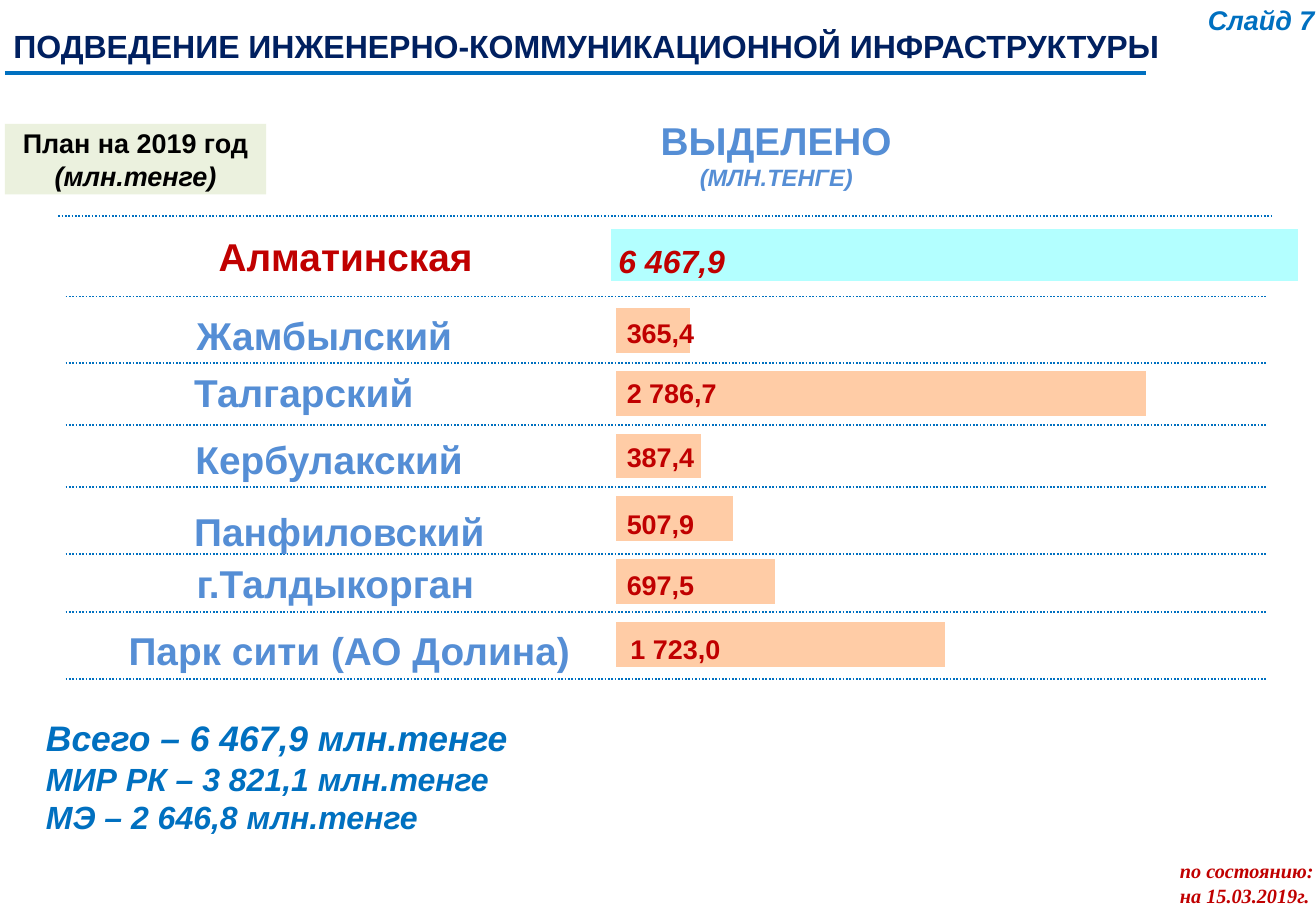
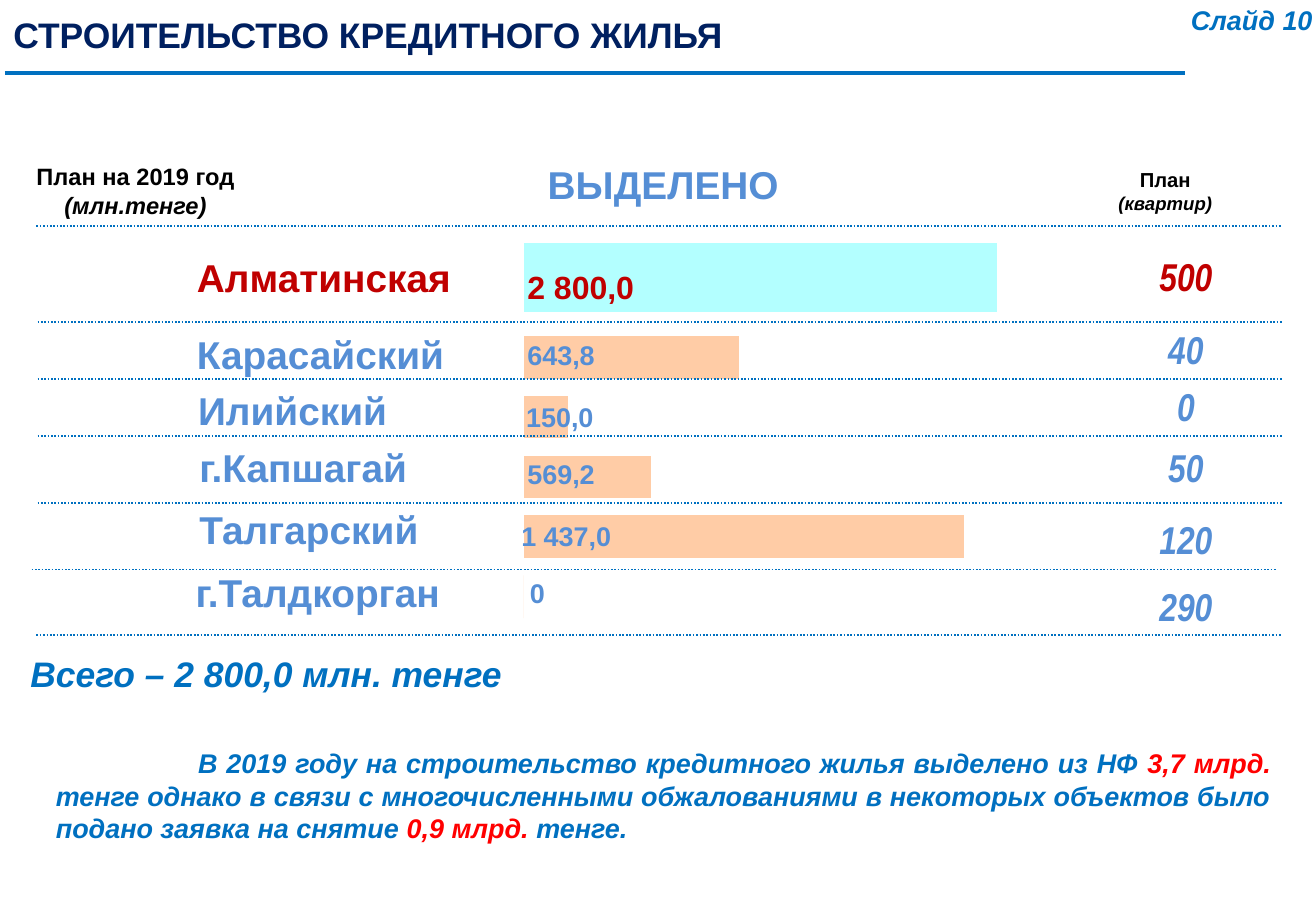
from dataclasses import dataclass, replace
from typing import Any, Optional

from lxml import etree
from pptx import Presentation
from pptx import util as u
from pptx.chart import data as chart_data
from pptx.dml.color import RGBColor
from pptx.enum import chart as charts, dml, shapes, text
from pptx.oxml.ns import qn

# Shared scale, colours and insets
SCALE = 9144  # EMU in one px, 100 px to the inch
NAVY = RGBColor(0x00, 0x20, 0x60)
BLUE = RGBColor(0x00, 0x70, 0xC0)
SOFT_BLUE = RGBColor(0x55, 0x8E, 0xD5)
DARK_RED = RGBColor(0xC0, 0x00, 0x00)
RED = RGBColor(0xFF, 0x00, 0x00)
BLACK = RGBColor(0x00, 0x00, 0x00)
PALE_GREEN = RGBColor(0xEB, 0xF1, 0xDE)
CYAN = RGBColor(0xB3, 0xFF, 0xFF)
PEACH = RGBColor(0xFF, 0xCC, 0xA6)
WIDE = (12, 6)
NARROW = (10, 5)
CENTER = text.PP_ALIGN.CENTER
JUSTIFY = text.PP_ALIGN.JUSTIFY


def px(length: int) -> u.Emu:
    return u.Emu(length * SCALE)


@dataclass(frozen=True)
class Style:
    size: int
    color: RGBColor
    italic: bool = False
    font: str = "Arial"


NAME = Style(23, SOFT_BLUE)
REGION = Style(23, DARK_RED)
FLATS = Style(23, SOFT_BLUE, True, "Arial Narrow")
TOTAL = Style(21, BLUE, True)
SUBTOTAL = Style(19, BLUE, True)
NOTE = Style(16, BLUE, True)
STAMP = Style(12, DARK_RED, True, "Times New Roman")


@dataclass(frozen=True)
class Line:
    """One paragraph: runs of text, each with an optional own colour."""
    runs: list[tuple[str, Optional[RGBColor]]]
    style: Style
    indent: int = 0


@dataclass(frozen=True)
class Label:
    left: int
    top: int
    width: int
    lines: list[Line]
    inset: tuple[int, int] = WIDE
    height: Optional[int] = None  # None: as tall as its lines
    align: Optional[text.PP_ALIGN] = None
    wrap: bool = False
    middle: bool = False
    fill: Optional[RGBColor] = None


@dataclass(frozen=True)
class Row:
    """A district: its name, its allocated sum, its bar and its flats."""
    name: str
    name_left: int
    name_top: int
    name_width: int
    value: str
    value_left: int
    value_top: int
    bar: int
    flats: str = ""
    flats_top: int = 0


@dataclass(frozen=True)
class BarChart:
    left: int
    top: int
    width: int
    height: int
    plot: tuple[float, float, float, float]
    maximum: int
    values: list[int]
    color: RGBColor


def line(words: str, style: Style) -> Line:
    return Line([(words, None)], style)


def add_label(slide: Any, label: Label) -> None:
    side, edge = label.inset
    height = label.height or round(sum(item.style.size * 1.7 for item in label.lines)) + 2 * edge
    box = slide.shapes.add_textbox(px(label.left), px(label.top), px(label.width), px(height))
    if label.fill is not None:
        box.fill.solid()
        box.fill.fore_color.rgb = label.fill
    frame = box.text_frame
    frame.word_wrap = label.wrap
    frame.auto_size = (text.MSO_AUTO_SIZE.NONE if label.height
                       else text.MSO_AUTO_SIZE.SHAPE_TO_FIT_TEXT)
    frame.margin_left = frame.margin_right = px(side)
    frame.margin_top = frame.margin_bottom = px(edge)
    frame.vertical_anchor = text.MSO_ANCHOR.MIDDLE if label.middle else text.MSO_ANCHOR.TOP
    for index, item in enumerate(label.lines):
        paragraph = frame.add_paragraph() if index else frame.paragraphs[0]
        if label.align is not None:
            paragraph.alignment = label.align
        if item.indent:
            paragraph._p.get_or_add_pPr().set("indent", str(px(item.indent)))
        font = paragraph.font
        font.name, font.size = item.style.font, u.Pt(item.style.size)
        font.bold, font.italic = True, item.style.italic
        font.color.rgb = item.style.color
        for words, color in item.runs:
            run = paragraph.add_run()
            run.text = words
            if color is not None:
                run.font.color.rgb = color


def add_rule(slide: Any, left: int, right: int, top: int, dotted: bool = True) -> None:
    rule = slide.shapes.add_connector(
        shapes.MSO_CONNECTOR.STRAIGHT, px(left), px(top), px(right), px(top))
    rule.line.color.rgb = BLUE
    rule.line.width = u.Pt(1 if dotted else 2.25)
    if dotted:
        rule.line.dash_style = dml.MSO_LINE.ROUND_DOT
    etree.SubElement(rule._element.spPr, qn("a:effectLst"))


def add_bars(slide: Any, bars: BarChart) -> None:
    data = chart_data.CategoryChartData()
    data.categories = [str(number + 1) for number in range(len(bars.values))]
    data.add_series("Series 1", bars.values)
    chart = slide.shapes.add_chart(
        charts.XL_CHART_TYPE.BAR_STACKED, px(bars.left), px(bars.top),
        px(bars.width), px(bars.height), data).chart
    chart.has_legend = chart.has_title = False
    chart.font.name, chart.font.size = "Calibri", u.Pt(18)
    chart.font.color.rgb = BLACK
    for axis in (chart.category_axis, chart.value_axis):
        axis.has_major_gridlines = False
        axis.visible = False
    chart.value_axis.minimum_scale = 0
    chart.value_axis.maximum_scale = bars.maximum
    plot = chart.plots[0]
    plot.gap_width, plot.overlap, plot.vary_by_categories = 40, 100, False
    fill = plot.series[0].format.fill
    fill.solid()
    fill.fore_color.rgb = bars.color

    # Fixed inner plot area
    area = chart._chartSpace.chart.plotArea
    for old in area.findall(qn("c:layout")):
        area.remove(old)
    layout = etree.Element(qn("c:layout"))
    area.insert(0, layout)
    manual = etree.SubElement(layout, qn("c:manualLayout"))
    settings = [("layoutTarget", "inner"), ("xMode", "edge"), ("yMode", "edge")]
    settings += list(zip("xywh", map(str, bars.plot)))
    for tag, value in settings:
        etree.SubElement(manual, qn(f"c:{tag}")).set("val", value)


def add_rows(slide: Any, rows: list[Row], inset: tuple[int, int], value_color: RGBColor) -> None:
    value_widths = {1: 12, 5: 56, 7: 75}
    for row in rows:
        add_label(slide, Label(row.name_left, row.name_top, row.name_width,
                               [line(row.name, NAME)], inset))
        add_label(slide, Label(row.value_left, row.value_top,
                               value_widths[len(row.value)] + 2 * inset[0],
                               [line(row.value, Style(16, value_color))], inset))
        if row.flats:
            add_flats(slide, row.flats, row.flats_top, FLATS)


def add_flats(slide: Any, count: str, top: int, style: Style) -> None:
    add_label(slide, Label(926, top, 100, [line(count, style)], align=CENTER, middle=True))


def new_slide(presentation: Any, title: Label, rule_right: int, number: Label) -> Any:
    slide = presentation.slides.add_slide(presentation.slide_layouts[6])
    add_label(slide, title)
    add_rule(slide, 4, rule_right, 60, dotted=False)
    add_label(slide, number)
    return slide


def plan_label(left: int, top: int, width: int, heading: str, size: int,
               unit: str, unit_size: int, fill: Optional[RGBColor] = None) -> Label:
    return Label(left, top, width,
                 [line(heading, Style(size, BLACK)), line(unit, Style(unit_size, BLACK, True))],
                 height=58, align=CENTER, wrap=True, middle=True, fill=fill)


INFRASTRUCTURE_ROWS = [
    Row("Жамбылский", 152, 252, 232, "365,4", 506, 256, 14),
    Row("Талгарский", 150, 299, 202, "2 786,7", 506, 305, 100),
    Row("Кербулакский", 151, 354, 242, "387,4", 506, 358, 16),
    Row("Панфиловский", 150, 413, 261, "507,9", 506, 413, 22),
    Row("г.Талдыкорган", 152, 456, 250, "697,5", 506, 463, 30),
    Row("Парк сити (АО Долина)", 96, 511, 405, "1 723,0", 509, 516, 62),
]
HOUSING_ROWS = [
    Row("Карасайский", 150, 266, 229, "643,8", 422, 273, 49, "40", 262),
    Row("Илийский", 151, 312, 181, "150,0", 421, 324, 10, "0", 309),
    Row("г.Капшагай", 152, 359, 196, "569,2", 422, 371, 29, "50", 359),
    Row("Талгарский", 152, 410, 206, "1 437,0", 417, 422, 100, "120", 418),
    Row("г.Талдкорган", 149, 462, 226, "0", 424, 469, 0, "290", 473),
]


def bottom_up(rows: list[Row]) -> list[int]:
    return [row.bar for row in reversed(rows)]


def build_infrastructure(presentation: Any) -> None:
    slide = new_slide(
        presentation,
        Label(-1, 16, 985, [line("ПОДВЕДЕНИЕ ИНЖЕНЕРНО-КОММУНИКАЦИОННОЙ ИНФРАСТРУКТУРЫ",
                                 Style(19, NAVY))]),
        943, Label(982, -3, 113, [line("Слайд 7", NOTE)]))
    # Bars and row rules
    add_bars(slide, BarChart(148, 236, 940, 329, (0.382, 0.031, 0.557, 0.943), 120,
                             bottom_up(INFRASTRUCTURE_ROWS), PEACH))
    add_bars(slide, BarChart(247, 178, 878, 64, (0.291, 0.031, 0.702, 0.943), 109, [100], CYAN))
    add_rule(slide, 48, 1046, 178)
    for top in (244, 299, 350, 401, 456, 504, 559):
        add_rule(slide, 54, 1043, top)
    # Headings and region total
    labels = [
        plan_label(4, 102, 215, "План на 2019 год", 16, "(млн.тенге)", 16, PALE_GREEN),
        Label(531, 90, 216, [line("ВЫДЕЛЕНО", NAME),
                             line("(МЛН.ТЕНГЕ)", Style(14, SOFT_BLUE, True))], align=CENTER),
        Label(170, 187, 231, [line("Алматинская", REGION)], NARROW),
        Label(499, 194, 109, [line("6 467,9", replace(SUBTOTAL, color=DARK_RED))], NARROW),
        Label(28, 585, 444, [line("Всего – 6 467,9 млн.тенге", TOTAL),
                             line("МИР РК – 3 821,1 млн.тенге", SUBTOTAL),
                             line("МЭ – 2 646,8 млн.тенге", SUBTOTAL)],
              NARROW, align=JUSTIFY, wrap=True),
        Label(959, 701, 139, [line("по состоянию:", STAMP), line("на 15.03.2019г.", STAMP)]),
    ]
    for label in labels:
        add_label(slide, label)
    add_rows(slide, INFRASTRUCTURE_ROWS, NARROW, DARK_RED)


def build_housing(presentation: Any) -> None:
    slide = new_slide(
        presentation,
        Label(-1, 5, 614, [line("СТРОИТЕЛЬСТВО КРЕДИТНОГО ЖИЛЬЯ", Style(21, NAVY))]),
        975, Label(968, -3, 125, [line("Слайд 10", NOTE)]))
    # Bars and row rules
    add_bars(slide, BarChart(388, 178, 499, 138, (0.086, 0.08, 0.914, 0.571), 117, [100], CYAN))
    add_bars(slide, BarChart(72, 218, 940, 306, (0.382, 0.168, 0.451, 0.806), 117,
                             bottom_up(HOUSING_ROWS), PEACH))
    for left, top in ((30, 186), (31, 265), (31, 312), (31, 359), (31, 414), (26, 469), (30, 523)):
        add_rule(slide, left, left + 1024, top)
    # Headings, region total and closing remark
    remark = Line([("В 2019 году на строительство кредитного жилья выделено из НФ ", None),
                   ("3,7 млрд. ", RED),
                   ("тенге однако в связи с многочисленными обжалованиями в некоторых объектов "
                    "было подано заявка на снятие ", None),
                   ("0,9 млрд. ", RED), ("тенге.", None)], NOTE, indent=117)
    labels = [
        plan_label(4, 128, 215, "План на 2019 год", 14, "(млн.тенге)", 14),
        plan_label(907, 128, 104, "План", 12, "(квартир)", 11),
        Label(438, 126, 216, [line("ВЫДЕЛЕНО", NAME)], align=CENTER),
        Label(150, 203, 235, [line("Алматинская", REGION)]),
        Label(422, 214, 113, [line("2 800,0", Style(19, DARK_RED))]),
        Label(13, 531, 466, [line("Всего – 2 800,0 млн. тенге", TOTAL)],
              align=JUSTIFY, wrap=True),
        Label(34, 609, 1024, [remark], height=94, align=JUSTIFY, wrap=True),
    ]
    for label in labels:
        add_label(slide, label)
    add_flats(slide, "500", 202, replace(FLATS, color=DARK_RED))
    add_rows(slide, HOUSING_ROWS, WIDE, SOFT_BLUE)


def main() -> None:
    presentation = Presentation()
    presentation.slide_width, presentation.slide_height = px(1083), px(750)
    build_infrastructure(presentation)
    build_housing(presentation)
    presentation.save("out.pptx")


if __name__ == "__main__":
    main()
